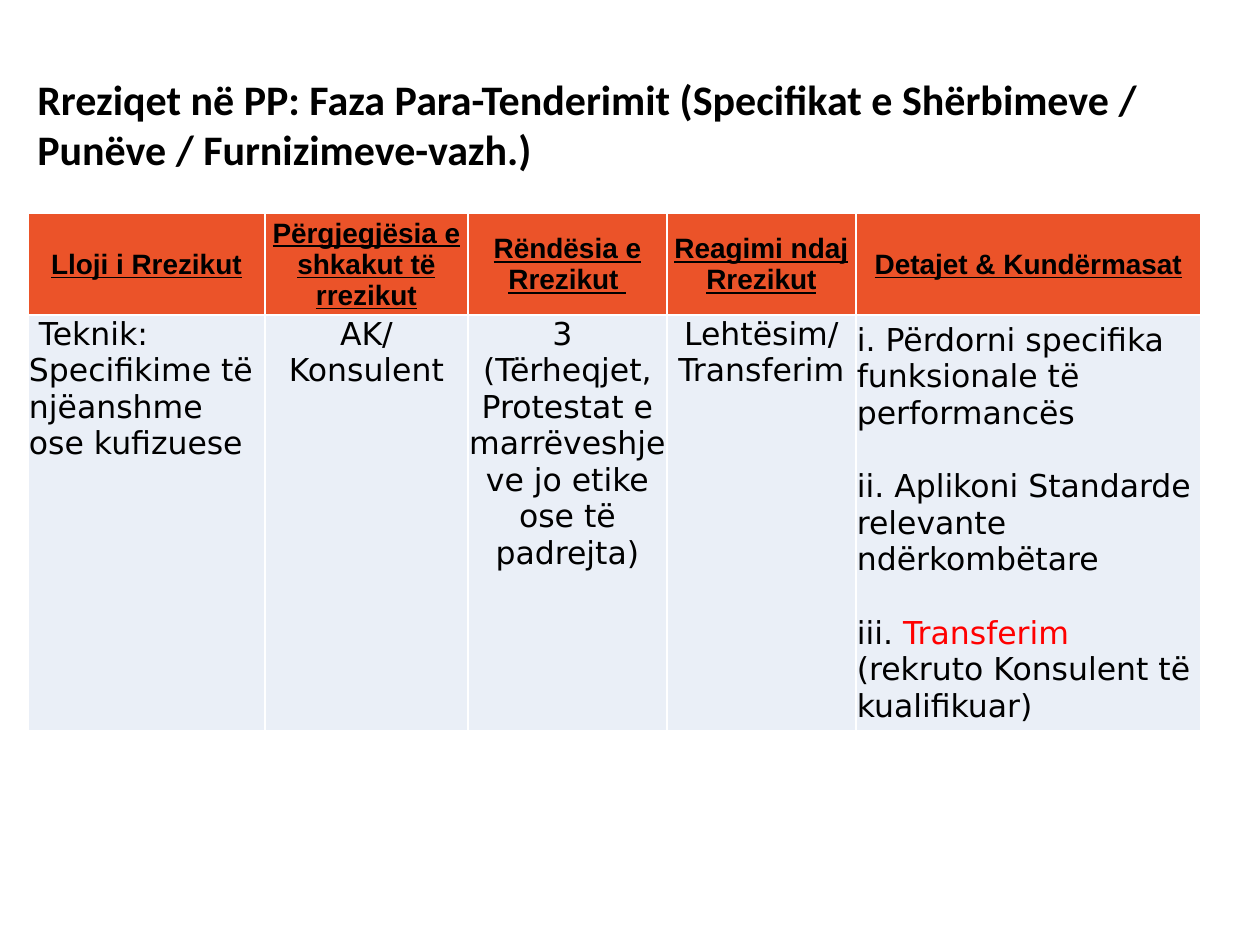
from lxml.etree import SubElement
from pptx import Presentation
from pptx.dml.color import RGBColor
from pptx.enum.text import MSO_ANCHOR as ANCHOR, PP_ALIGN as ALIGN
from pptx.oxml import parse_xml
from pptx.oxml.ns import nsdecls, qn
from pptx.util import Emu, Pt

PX = 914400 // 126
TITLE = ("Rreziqet në PP: Faza Para-Tenderimit "
         "(Specifikat e Shërbimeve / Punëve / Furnizimeve-vazh.)")
HEADERS = ["Lloji i Rrezikut", "Përgjegjësia e shkakut të rrezikut",
           "Rëndësia e Rrezikut ", "Reagimi ndaj Rrezikut",
           "Detajet & Kundërmasat"]
RISK = [
    [" Teknik: Specifikime të", "njëanshme ose kufizuese"],
    ["AK/ Konsulent"],
    ["3 ", "(Tërheqjet, Protestat e marrëveshjeve jo etike ose të padrejta)"],
    ["Lehtësim/ Transferim"],
    ["i. Përdorni specifika funksionale të performancës",
     "ii. Aplikoni Standarde relevante ndërkombëtare",
     [("iii. ", "000000"), ("Transferim ", "FF0000"),
      ("(rekruto Konsulent të kualifikuar)", "000000")]],
]
COLS = [237, 203, 199, 189, 345]
ROWS = [102, 416]
HEAD_FILL, BODY_FILL, BORDER = "EB5329", "EAEFF7", "FFFFFF"


def px(n):
    """Turn px into EMU."""
    return Emu(n * PX)


def rgb(value):
    """Turn a hex string into a colour."""
    return RGBColor.from_string(value)


def write(tf, paras, font, size, bold=False, underline=False,
          align=ALIGN.LEFT, gap=0):
    """Write paragraphs, each a string or a list of (text, colour) runs."""
    for i, runs in enumerate(paras):
        p = tf.add_paragraph() if i else tf.paragraphs[0]
        p.alignment = align
        p.space_before = Pt(gap if i else 0)
        for text, color in [(runs, "000000")] if isinstance(runs, str) else runs:
            r = p.add_run()
            r.text = text
            f = r.font
            f.name, f.size, f.bold, f.underline = font, Pt(size), bold, underline
            f.color.rgb = rgb(color)


def format_cell(cell, fill, anchor):
    """Set the fill, anchor, margins and borders of a cell."""
    cell.fill.solid()
    cell.fill.fore_color.rgb = rgb(fill)
    cell.vertical_anchor = anchor
    cell.margin_left = cell.margin_right = cell.margin_top = px(1)
    cell.margin_bottom = 0
    tc_pr = cell._tc.get_or_add_tcPr()
    for i, side in enumerate("LRTB"):
        ln = parse_xml(f'<a:ln{side} {nsdecls("a")} w="{Pt(1)}"/>')
        solid = SubElement(ln, qn("a:solidFill"))
        SubElement(solid, qn("a:srgbClr"), val=BORDER)
        tc_pr.insert(i, ln)


def main():
    """Build the slide."""
    prs = Presentation()
    prs.slide_width, prs.slide_height = px(1260), px(945)
    s = prs.slides.add_slide(prs.slide_layouts[6])

    tf = s.shapes.add_textbox(px(25), px(67), px(1235), px(115)).text_frame
    tf.word_wrap = True
    write(tf, [TITLE], "Calibri", 24, bold=True)

    table = s.shapes.add_table(len(ROWS), len(COLS), px(28), px(213),
                               px(sum(COLS)), px(sum(ROWS))).table
    for row, height in zip(table.rows, ROWS):
        row.height = px(height)
    last = len(COLS) - 1
    for c, (width, header, paras) in enumerate(zip(COLS, HEADERS, RISK)):
        table.columns[c].width = px(width)
        head, body = table.cell(0, c), table.cell(1, c)
        format_cell(head, HEAD_FILL, ANCHOR.MIDDLE)
        write(head.text_frame, [header], "Arial", 16, bold=True,
              underline=True, align=ALIGN.CENTER)
        format_cell(body, BODY_FILL, ANCHOR.MIDDLE if c == last else ANCHOR.TOP)
        write(body.text_frame, paras, "DejaVu Sans", 18,
              align=ALIGN.LEFT if c in (0, last) else ALIGN.CENTER,
              gap=21 if c == last else 0)

    prs.save("out.pptx")


if __name__ == "__main__":
    main()
